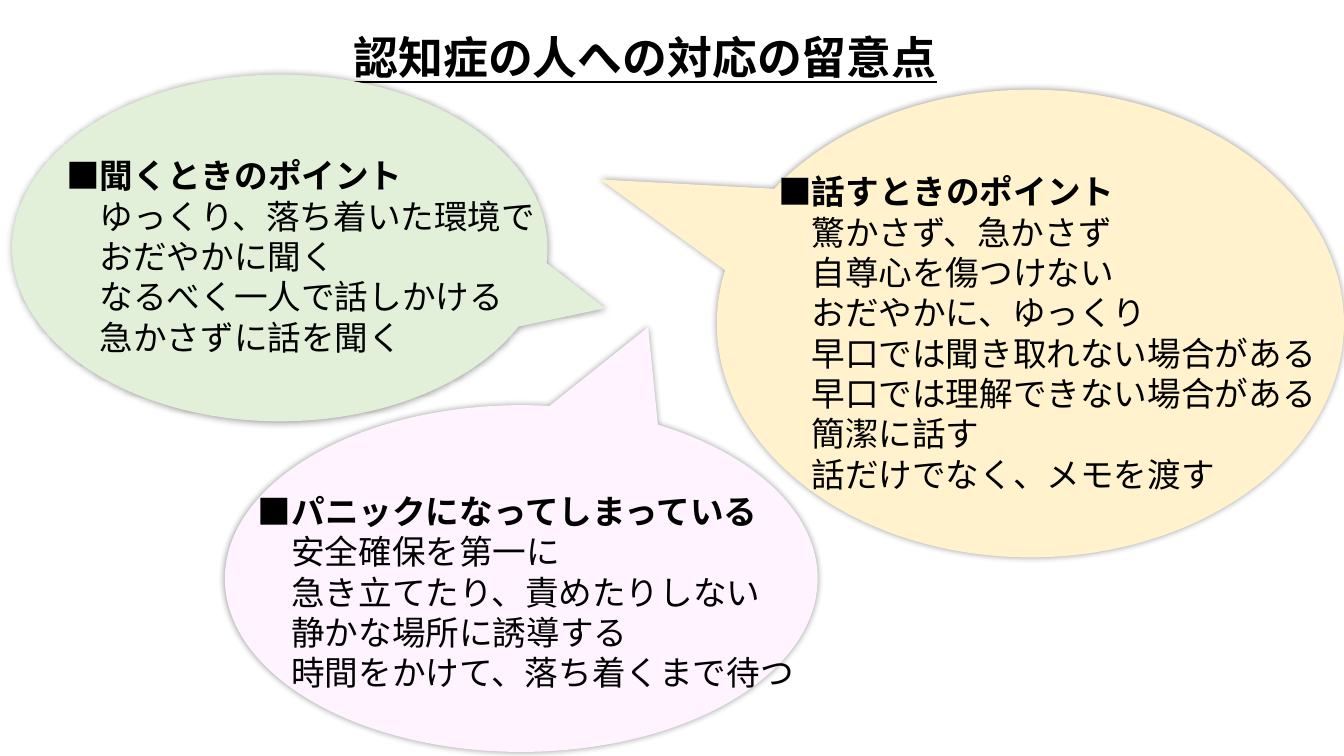
import pptx
import pptx.dml.color
import pptx.enum.shapes
import pptx.enum.text
import pptx.oxml
import pptx.oxml.ns
import pptx.util
from pptx.util import Inches

BUBBLES = [
    {
        "bounds": (0.12, 0.74, 5.31, 3.44),
        "tail": (0.608, 0.174),
        "fill": "E2F0D9",
        "text_bounds": (0.56, 1.49, 4.89, 2.12),
        "heading": "■聞くときのポイント",
        "points": [
            "ゆっくり、落ち着いた環境で",
            "おだやかに聞く",
            "なるべく一人で話しかける",
            "急かさずに話を聞く",
        ],
    },
    {
        "bounds": (7.11, 0.89, 6.22, 4.64),
        "tail": (-0.686, -0.308),
        "fill": "FFF2CC",
        "text_bounds": (7.62, 1.65, 5.59, 3.33),
        "heading": "■話すときのポイント",
        "points": [
            "驚かさず、急かさず",
            "自尊心を傷つけない",
            "おだやかに、ゆっくり",
            "早口では聞き取れない場合がある",
            "早口では理解できない場合がある",
            "簡潔に話す",
            "話だけでなく、メモを渡す",
        ],
    },
    {
        "bounds": (2.23, 4.02, 5.88, 3.44),
        "tail": (0.214, -0.725),
        "fill": "FFF3FF",
        "text_bounds": (2.46, 4.82, 5.59, 2.12),
        "heading": "■パニックになってしまっている",
        "points": [
            "安全確保を第一に",
            "急き立てたり、責めたりしない",
            "静かな場所に誘導する",
            "時間をかけて、落ち着くまで待つ",
        ],
    },
]


def color(value):
    return pptx.dml.color.RGBColor.from_string(value)


def write_text(paragraph, text, font="Calibri", size=24, ink="000000",
               bold=False, underline=False, indent=0):
    run = paragraph.add_run()
    run.text = text
    run.font.name = font
    run.font.size = pptx.util.Pt(size)
    run.font.color.rgb = color(ink)
    run.font.bold = bold
    run.font.underline = underline
    if indent:
        paragraph._p.get_or_add_pPr().set("marL", str(Inches(indent)))


class SlideBuilder:
    """Holds the shared style and the slide being built."""

    indent = 0.33
    shadow_blur = 5
    shadow_opacity = 40

    def __init__(self, slide):
        self.slide = slide

    def text_frame(self, shapes, bounds):
        frame = shapes.add_textbox(*map(Inches, bounds)).text_frame
        frame.word_wrap = False
        frame.auto_size = pptx.enum.text.MSO_AUTO_SIZE.SHAPE_TO_FIT_TEXT
        return frame

    def title(self, text, bounds):
        frame = self.text_frame(self.slide.shapes, bounds)
        write_text(frame.paragraphs[0], text, size=32, bold=True, underline=True)

    def glow(self, shape):
        shape.shadow.inherit = False
        effects = shape._element.spPr.find(pptx.oxml.ns.qn("a:effectLst"))
        effects.append(pptx.oxml.parse_xml(
            f'<a:outerShdw {pptx.oxml.ns.nsdecls("a")} '
            f'blurRad="{pptx.util.Pt(self.shadow_blur)}" dist="0" dir="0" '
            'algn="ctr" rotWithShape="0"><a:srgbClr val="000000">'
            f'<a:alpha val="{self.shadow_opacity * 1000}"/>'
            '</a:srgbClr></a:outerShdw>'
        ))

    def callout(self, shapes, bounds, tail, fill):
        kind = pptx.enum.shapes.MSO_SHAPE.OVAL_CALLOUT
        shape = shapes.add_shape(kind, *map(Inches, bounds))
        for index, value in enumerate(tail):
            shape.adjustments[index] = value
        shape.fill.solid()
        shape.fill.fore_color.rgb = color(fill)
        shape.line.fill.background()
        self.glow(shape)

    def bubble(self, bounds, tail, fill, text_bounds, heading, points):
        shapes = self.slide.shapes.add_group_shape().shapes
        self.callout(shapes, bounds, tail, fill)
        frame = self.text_frame(shapes, text_bounds)
        write_text(frame.paragraphs[0], heading, bold=True)
        for point in points:
            write_text(frame.add_paragraph(), point, indent=self.indent)


def main():
    presentation = pptx.Presentation()
    presentation.slide_width = Inches(13.33)
    presentation.slide_height = Inches(7.5)
    slide = presentation.slides.add_slide(presentation.slide_layouts[6])
    builder = SlideBuilder(slide)
    builder.title("認知症の人への対応の留意点", (3.41, 0.25, 6.04, 0.64))
    for bubble in BUBBLES:
        builder.bubble(**bubble)
    presentation.save("out.pptx")


if __name__ == "__main__":
    main()
